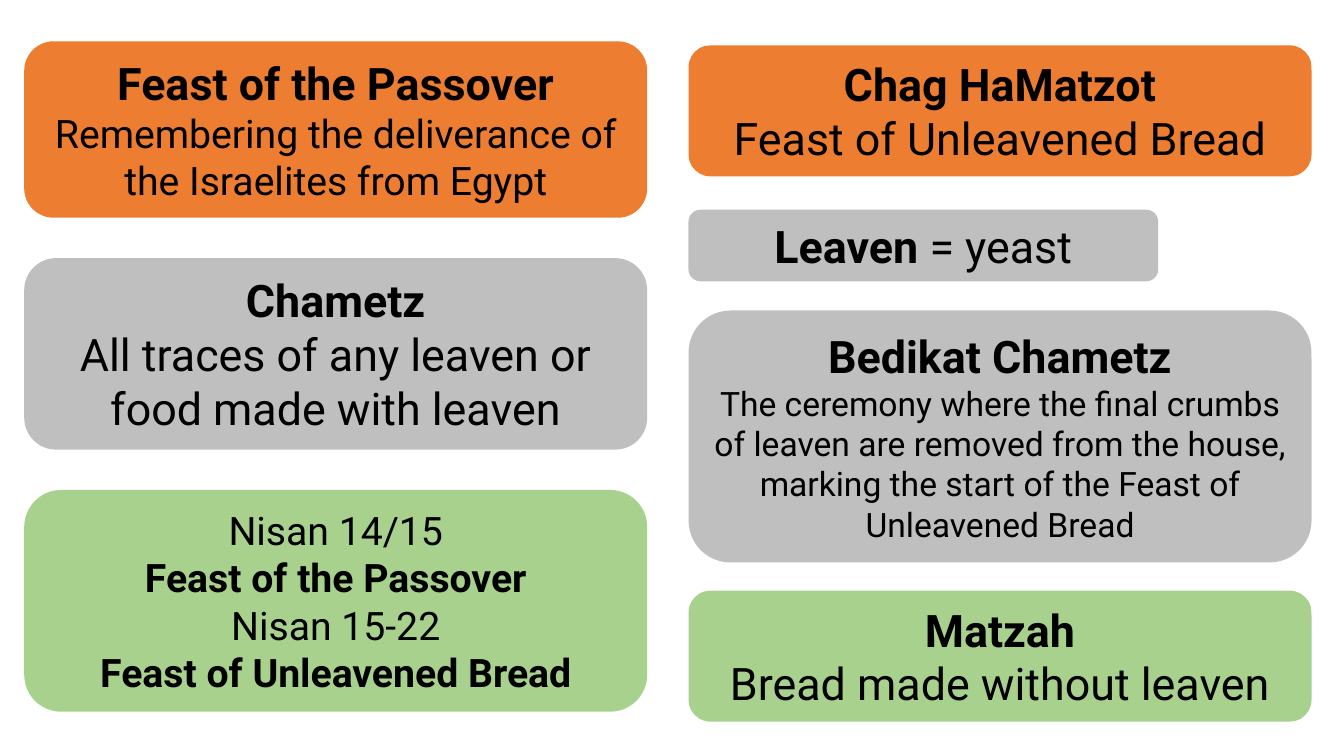
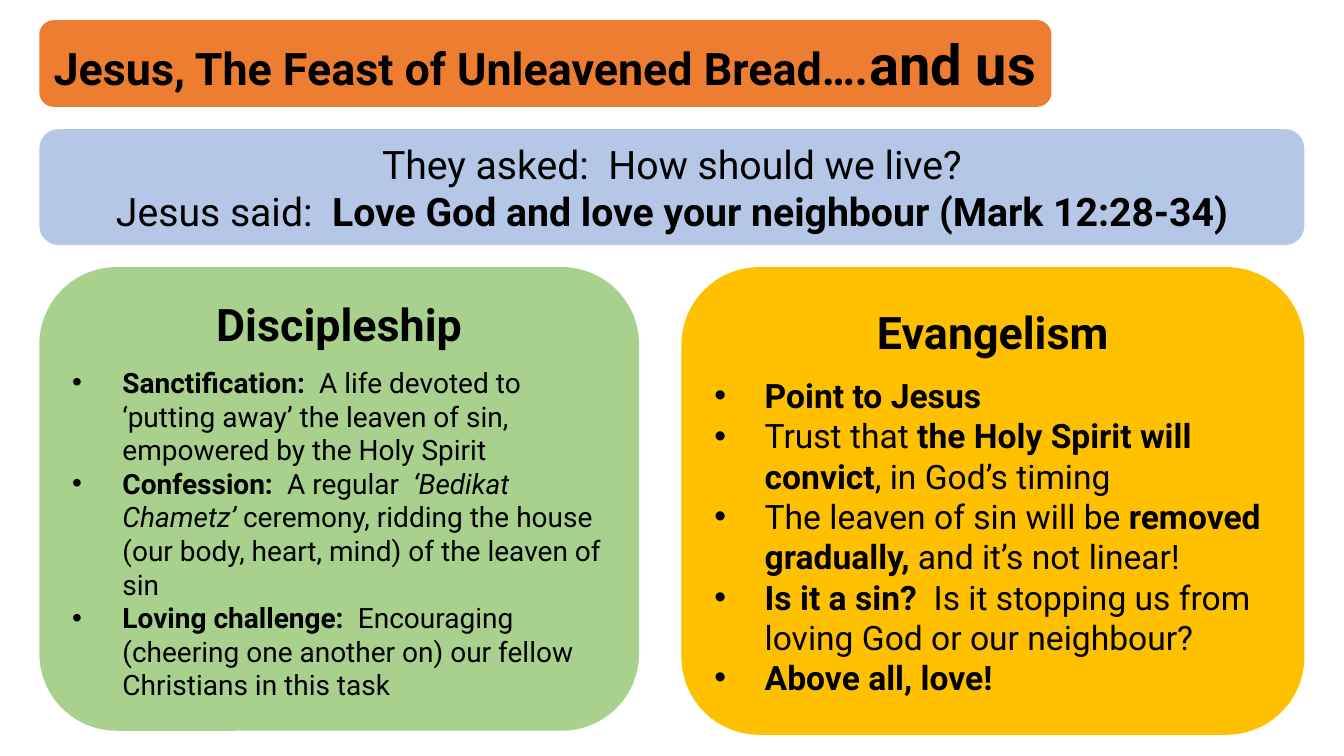
"""Builds two slides on the Feast of Unleavened Bread."""
import dataclasses

import pptx
import pptx.dml.color
import pptx.enum.shapes
import pptx.enum.text
import pptx.oxml
import pptx.oxml.ns
import pptx.util

Pt = pptx.util.Pt
CENTER = pptx.enum.text.PP_ALIGN.CENTER
LEFT = pptx.enum.text.PP_ALIGN.LEFT


@dataclasses.dataclass(frozen=True)
class Theme:
    """Colours, type sizes and spacing shared by the slides."""
    font: str = "Roboto"
    ink: str = "000000"
    orange: str = "ED7D31"
    grey: str = "BFBFBF"
    green: str = "A9D18E"
    blue: str = "B4C7E7"
    gold: str = "FFC000"
    accent: int = 40
    heading: int = 32
    large: int = 28
    medium: int = 24
    small: int = 20
    margin_x: float = 7.2
    margin_y: float = 3.6
    hanging: int = 36
    corner_inset: float = 0.2929 / 6


THEME = Theme()
PAGE = (960, 540)

COLUMN_WIDTH = 445
LEFT_COLUMN, RIGHT_COLUMN = 17.3, 491.8

TERMS = [
    ((LEFT_COLUMN, 29.5, COLUMN_WIDTH, 126), THEME.orange, [
        (THEME.heading, [("Feast of the Passover", "b")]),
        (THEME.large, [("Remembering the deliverance of the Israelites from Egypt", "")])]),
    ((LEFT_COLUMN, 184.4, COLUMN_WIDTH, 136.8), THEME.grey, [
        (THEME.heading, [("Chametz", "b")]),
        (THEME.heading, [("All traces of any leaven or food made with leaven", "")])]),
    ((LEFT_COLUMN, 350, COLUMN_WIDTH, 158.4), THEME.green, [
        (THEME.large, [("Nisan 14/15", "")]),
        (THEME.large, [("Feast of the Passover", "b")]),
        (THEME.large, [("Nisan 15-22", "")]),
        (THEME.large, [("Feast of Unleavened Bread", "b")])]),
    ((RIGHT_COLUMN, 32.4, COLUMN_WIDTH, 93.6), THEME.orange, [
        (THEME.heading, [("Chag HaMatzot", "b")]),
        (THEME.heading, [("Feast of Unleavened Bread", "")])]),
    ((RIGHT_COLUMN, 149.8, 335.5, 51.1), THEME.grey, [
        (THEME.heading, [("Leaven", "b"), (" = yeast", "")])]),
    ((RIGHT_COLUMN, 221.8, COLUMN_WIDTH, 180), THEME.grey, [
        (THEME.heading, [("Bedikat Chametz", "b")]),
        (THEME.medium, [("The ceremony where the final crumbs of leaven are removed from the "
                         "house, marking the start of the Feast of Unleavened Bread", "")])]),
    ((RIGHT_COLUMN, 421.9, COLUMN_WIDTH, 93.6), THEME.green, [
        (THEME.heading, [("Matzah", "b")]),
        (THEME.heading, [("Bread made without leaven", "")])]),
]

EDGE = 28.1
TOPICS_TOP = 190.8

TITLE_BOX = (EDGE, 14.4, 723, 61.9)
TITLE = [("Jesus, The Feast of Unleavened Bread….", "b", THEME.heading),
         ("and us", "b", THEME.accent)]

VERSE_BOX = (EDGE, 92.2, 903.6, 82.8)
VERSE = [
    (THEME.large, [("They asked:  How should we live?", "")]),
    (THEME.large, [("Jesus said:  ", ""),
                   ("Love God and love your neighbour (Mark 12:28-34)", "b")]),
]

TOPICS = [
    {"box": (EDGE, TOPICS_TOP, 428.4, 331.2), "fill": THEME.green,
     "heading": "Discipleship", "gap": 11, "size": THEME.small, "points": [
         [("Sanctification:  ", "b"),
          ("A life devoted to ‘putting away’ the leaven of sin, "
           "empowered by the Holy Spirit", "")],
         [("Confession:  ", "b"), ("A regular  ", ""), ("‘Bedikat Chametz’", "i"),
          (" ceremony, ridding the house (our body, heart, mind) of the leaven of sin", "")],
         [("Loving challenge:  ", "b"),
          ("Encouraging (cheering one another on) our fellow Christians in this task", "")]]},
    {"box": (486.7, TOPICS_TOP, COLUMN_WIDTH, 334.1), "fill": THEME.gold,
     "heading": "Evangelism", "gap": 12, "size": THEME.medium, "points": [
         [("Point to Jesus", "b")],
         [("Trust that ", ""), ("the Holy Spirit will convict", "b"),
          (", in God’s timing", "")],
         [("The leaven of sin will be ", ""), ("removed gradually, ", "b"),
          ("and it’s not linear!", "")],
         [("Is it a sin?  ", "b"),
          ("Is it stopping us from loving God or our neighbour?", "")],
         [("Above all, love!", "b")]]},
]


def add_card(slide, box, fill):
    """Add a rounded card without outline or shadow."""
    card = slide.shapes.add_shape(pptx.enum.shapes.MSO_SHAPE.ROUNDED_RECTANGLE,
                                  *(Pt(length) for length in box))
    card.shadow.inherit = False
    card.fill.solid()
    card.fill.fore_color.rgb = pptx.dml.color.RGBColor.from_string(fill)
    card.line.fill.background()
    return card


def set_frame(frame, corner=0):
    """Set wrapping, anchor and margins, clearing the given corner inset."""
    frame.word_wrap = True
    frame.auto_size = pptx.enum.text.MSO_AUTO_SIZE.NONE
    frame.vertical_anchor = pptx.enum.text.MSO_ANCHOR.MIDDLE
    frame.margin_left = frame.margin_right = Pt(THEME.margin_x + corner)
    frame.margin_top = frame.margin_bottom = Pt(THEME.margin_y + corner)


def lay_on_card(slide, placeholder, box, fill):
    """Place a placeholder over a new card, inside its rounded corners."""
    add_card(slide, box, fill)
    placeholder.left, placeholder.top, placeholder.width, placeholder.height = map(Pt, box)
    placeholder.element.getparent().append(placeholder.element)
    set_frame(placeholder.text_frame, min(box[2:]) * THEME.corner_inset)
    return placeholder.text_frame


def next_paragraph(frame, index):
    """Return the first paragraph, or a new one after it."""
    return frame.add_paragraph() if index else frame.paragraphs[0]


def write_runs(paragraph, runs, size=None, alignment=CENTER):
    """Fill a paragraph with runs of (text, style) or (text, style, size)."""
    paragraph.alignment = alignment
    paragraph.space_before = paragraph.space_after = Pt(0)
    paragraph.line_spacing = 1.0
    for text, style, *own_size in runs:
        run = paragraph.add_run()
        run.text = text
        run.font.name = THEME.font
        run.font.size = Pt(own_size[0] if own_size else size)
        run.font.bold = style == "b"
        run.font.italic = style == "i"
        run.font.color.rgb = pptx.dml.color.RGBColor.from_string(THEME.ink)


def set_bullet(paragraph, bulleted):
    """Give a paragraph a hanging bullet, or remove the inherited one."""
    properties = paragraph._p.get_or_add_pPr()
    hanging = Pt(THEME.hanging) if bulleted else 0
    properties.set("marL", str(hanging))
    properties.set("indent", str(-hanging))
    namespace = pptx.oxml.ns.nsdecls("a")
    marks = ['<a:buFont %s typeface="Arial"/>', '<a:buChar %s char="•"/>']
    for mark in marks if bulleted else ["<a:buNone %s/>"]:
        properties.append(pptx.oxml.parse_xml(mark % namespace))


def write_card(slide, box, fill, paragraphs):
    """Add a card holding centred paragraphs of (size, runs)."""
    frame = add_card(slide, box, fill).text_frame
    set_frame(frame)
    for index, (size, runs) in enumerate(paragraphs):
        write_runs(next_paragraph(frame, index), runs, size)


def write_topic(slide, placeholder, topic):
    """Write a heading and its bulleted points on a card."""
    frame = lay_on_card(slide, placeholder, topic["box"], topic["fill"])
    heading = frame.paragraphs[0]
    write_runs(heading, [(topic["heading"], "b")], THEME.heading)
    heading.space_after = Pt(topic["gap"])
    set_bullet(heading, False)
    for runs in topic["points"]:
        point = frame.add_paragraph()
        write_runs(point, runs, topic["size"], LEFT)
        set_bullet(point, True)


def main():
    """Build and save the presentation."""
    deck = pptx.Presentation()
    deck.slide_width, deck.slide_height = map(Pt, PAGE)

    terms = deck.slides.add_slide(deck.slide_layouts.get_by_name("Blank"))
    for box, fill, paragraphs in TERMS:
        write_card(terms, box, fill, paragraphs)

    lessons = deck.slides.add_slide(deck.slide_layouts.get_by_name("Two Content"))
    title, *bodies = list(lessons.placeholders)
    title_frame = lay_on_card(lessons, title, TITLE_BOX, THEME.orange)
    write_runs(title_frame.paragraphs[0], TITLE, alignment=LEFT)
    write_card(lessons, VERSE_BOX, THEME.blue, VERSE)
    for body, topic in zip(bodies, TOPICS):
        write_topic(lessons, body, topic)

    deck.save("out.pptx")


if __name__ == "__main__":
    main()
